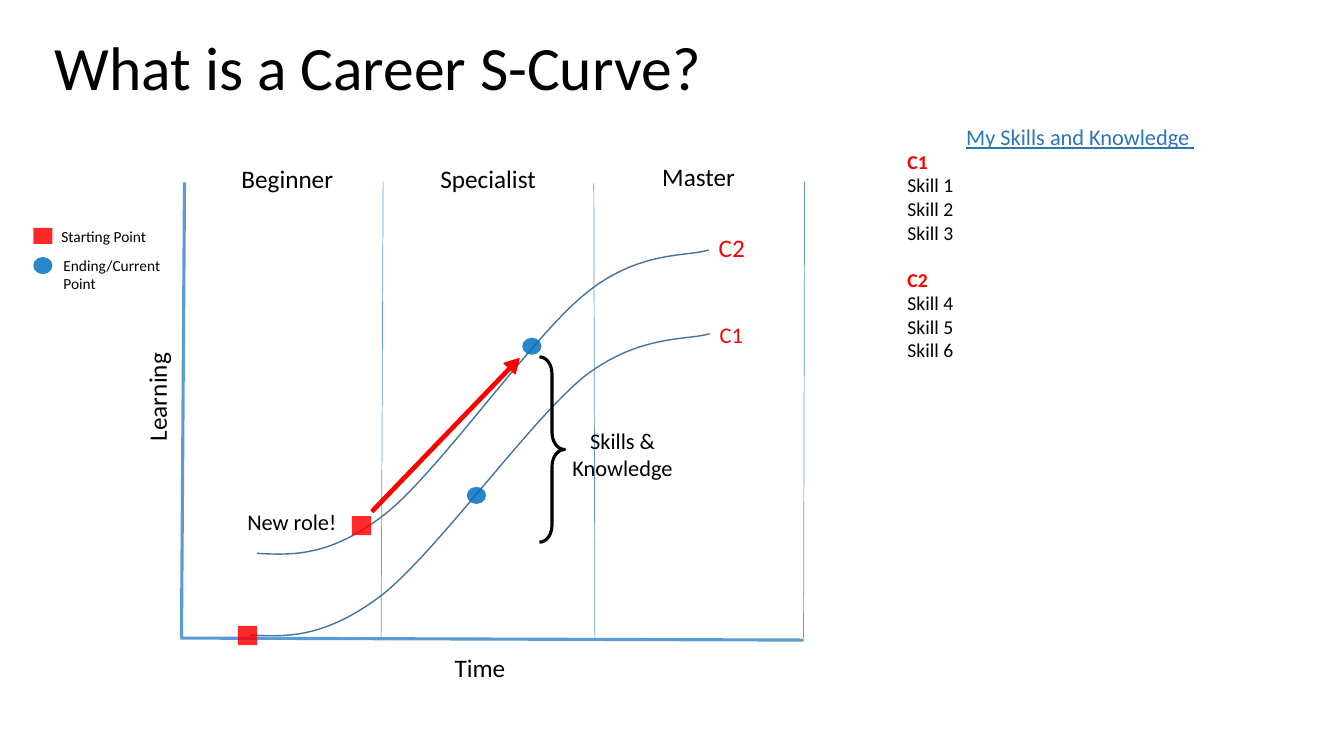
from lxml import etree
from pptx import Presentation
from pptx.dml.color import RGBColor
from pptx.enum import shapes, text
from pptx.oxml import ns
from pptx.util import Inches, Pt

COLORS = {"black": "000000", "red": "FF0000", "axis": "5B9BD5",
          "curve": "43739E", "dot": "0070C0", "heading": "2E75B6"}
LEFT, CENTER = text.PP_ALIGN.LEFT, text.PP_ALIGN.CENTER
SHAPE = shapes.MSO_SHAPE


def color(name):
    return RGBColor.from_string(COLORS[name])


def format_paragraph(p, size, name="black", align=LEFT, bold=False):
    p.alignment = align
    for r in p.runs:
        r.font.name, r.font.size, r.font.bold = "Calibri", Pt(size), bold
        r.font.color.rgb = color(name)


def place(sp, x, y, w, h):
    sp.left, sp.top, sp.width, sp.height = map(Inches, (x, y, w, h))


def add_title(s, title):
    sp = s.shapes.title
    place(sp, 0.44, -0.03, 11.5, 1.45)
    tf = sp.text_frame
    tf.text = title
    tf.vertical_anchor = text.MSO_ANCHOR.MIDDLE
    tf.paragraphs[0].line_spacing = 0.9
    format_paragraph(tf.paragraphs[0], 44)


def add_skills(s, heading, groups):
    sp = s.placeholders[1]
    place(sp, 8.9, 1.17, 3.63, 2.49)
    tf = sp.text_frame
    tf.auto_size = text.MSO_AUTO_SIZE.NONE
    lines = [heading]
    for group, skills in groups.items():
        lines += [group, *skills]
    tf.text = "\n".join(lines)
    for i, p in enumerate(tf.paragraphs):
        pPr = p._p.get_or_add_pPr()
        pPr.set("marL", "0")
        pPr.set("indent", "0")
        p.space_before = Pt(17 if p.text in groups and i > 1 else 0)
        etree.SubElement(pPr, ns.qn("a:buNone"))
        if i == 0:
            format_paragraph(p, 16, "heading", CENTER)
            p.runs[0].font.underline = True
        elif p.text in groups:
            format_paragraph(p, 14, "red", bold=True)
        else:
            format_paragraph(p, 14)


def add_label(s, label, x, y, w, h, size, name="black", align=LEFT, wrap=False):
    sp = s.shapes.add_textbox(*map(Inches, (x, y, w, h)))
    tf = sp.text_frame
    tf.word_wrap = wrap
    tf.text = label
    for p in tf.paragraphs:
        format_paragraph(p, size, name, align)
    return sp


def add_line(s, x1, y1, x2, y2, width):
    line = s.shapes.add_connector(shapes.MSO_CONNECTOR.STRAIGHT,
                                  *map(Inches, (x1, y1, x2, y2)))
    line.line.color.rgb = color("axis")
    line.line.width = Pt(width)
    etree.SubElement(line._element.spPr, ns.qn("a:effectLst"))


def add_curve(s, knots):
    """Draw a smooth curve; each three points after the first are one segment."""
    start, *rest = [(Inches(x), Inches(y)) for x, y in knots]
    builder = s.shapes.build_freeform(*start)
    builder.add_line_segments(rest, close=False)
    sp = builder.convert_to_shape()
    outline = sp._element.spPr.find(".//" + ns.qn("a:path"))
    lines = outline.findall(ns.qn("a:lnTo"))
    for k in range(0, len(lines), 3):
        segment = etree.SubElement(outline, ns.qn("a:cubicBezTo"))
        for line in lines[k:k + 3]:
            segment.append(line[0])
            outline.remove(line)
    sp.shadow.inherit = False
    sp.fill.background()
    sp.line.color.rgb = color("curve")
    sp.line.width = Pt(1)


def add_marker(s, kind, name, x, y, h):
    sp = s.shapes.add_shape(kind, *map(Inches, (x, y, 0.19, h)))
    sp.shadow.inherit = False
    sp.fill.solid()
    sp.fill.fore_color.rgb = color(name)
    sp.line.fill.background()
    rgb = sp._element.spPr.find(".//" + ns.qn("a:srgbClr"))
    etree.SubElement(rgb, ns.qn("a:alpha"), val="84000")


def add_outlined(s, kind, x, y, w, h, name, width, adjustments):
    sp = s.shapes.add_shape(kind, *map(Inches, (x, y, w, h)))
    sp.shadow.inherit = False
    sp.line.color.rgb = color(name)
    sp.line.width = Pt(width)
    for i, value in enumerate(adjustments):
        sp.adjustments[i] = value
    return sp


def main():
    prs = Presentation()
    prs.slide_width, prs.slide_height = Inches(13.33), Inches(7.5)
    s = prs.slides.add_slide(prs.slide_layouts[1])

    # Title and skills list
    add_title(s, "What is a Career S-Curve?")
    add_skills(s, "My Skills and Knowledge ", {
        "C1": ["Skill 1", "Skill 2", "Skill 3"],
        "C2": ["Skill 4", "Skill 5", "Skill 6"]})

    # Axes and stage dividers
    for ends in ((1.83, 1.81, 1.8, 6.33), (1.79, 6.33, 7.97, 6.35)):
        add_line(s, *ends, 2.25)
    for ends in ((3.78, 6.33, 3.8, 1.8), (5.89, 1.82, 5.9, 6.35),
                 (7.98, 1.8, 7.97, 6.33)):
        add_line(s, *ends, 0.5)
    add_label(s, "Time", 4.04, 6.42, 1.44, 0.4, 18, align=CENTER, wrap=True)
    add_label(s, "Learning", 1.01, 3.73, 1.09, 0.4, 18).rotation = 270
    for stage, x, y, w in ((" Beginner", 2.24, 1.57, 1.18),
                           ("Specialist", 4.27, 1.57, 1.16),
                           ("Master", 6.47, 1.55, 0.93)):
        add_label(s, stage, x, y, w, 0.4, 18)

    # S-curves
    add_curve(s, [(2.48, 6.3), (2.85, 6.32), (3.22, 6.33), (3.78, 5.91),
                  (4.33, 5.48), (5.25, 4.18), (5.79, 3.74),
                  (6.34, 3.31), (6.83, 3.38), (7.04, 3.31)])
    add_curve(s, [(2.55, 5.49), (2.91, 5.51), (3.28, 5.52), (3.82, 5.1),
                  (4.36, 4.67), (5.27, 3.35), (5.8, 2.92),
                  (6.33, 2.48), (6.82, 2.55), (7.03, 2.48)])
    add_label(s, "C1", 7.04, 3.14, 0.44, 0.37, 16, "red")
    add_label(s, "C2", 7.03, 2.26, 0.46, 0.4, 18, "red")

    # Legend labels
    add_label(s, "Starting Point", 0.51, 2.2, 1.06, 0.3, 11, wrap=True)
    add_label(s, "Ending/Current Point", 0.53, 2.49, 1.35, 0.47, 11, wrap=True)

    # Progress arrow
    arrow = add_outlined(s, SHAPE.RIGHT_ARROW, 3.37, 4.24, 2.1, 0.15,
                         "red", 1, (0.215, 0.9))
    arrow.rotation = 313.9
    arrow.fill.solid()
    arrow.fill.fore_color.rgb = color("red")

    # Starting and ending markers, legend first
    for x, y, h in ((0.33, 2.26, 0.16), (2.36, 6.21, 0.19), (3.49, 5.12, 0.19)):
        add_marker(s, SHAPE.RECTANGLE, "red", x, y, h)
    for x, y in ((0.33, 2.55), (5.18, 3.35), (4.63, 4.83)):
        add_marker(s, SHAPE.OVAL, "dot", x, y, 0.17)

    # New role and the skills gap
    add_label(s, "New role! ", 2.2, 4.99, 1.44, 0.37, 16, align=CENTER, wrap=True)
    add_label(s, "Skills & \nKnowledge ", 5.48, 4.19, 1.44, 0.64, 16,
              align=CENTER, wrap=True)
    brace = add_outlined(s, SHAPE.RIGHT_BRACE, 5.35, 3.54, 0.25, 1.84,
                         "black", 2.25, (0.67, 0.5))
    brace.fill.background()

    prs.save("out.pptx")


if __name__ == "__main__":
    main()
